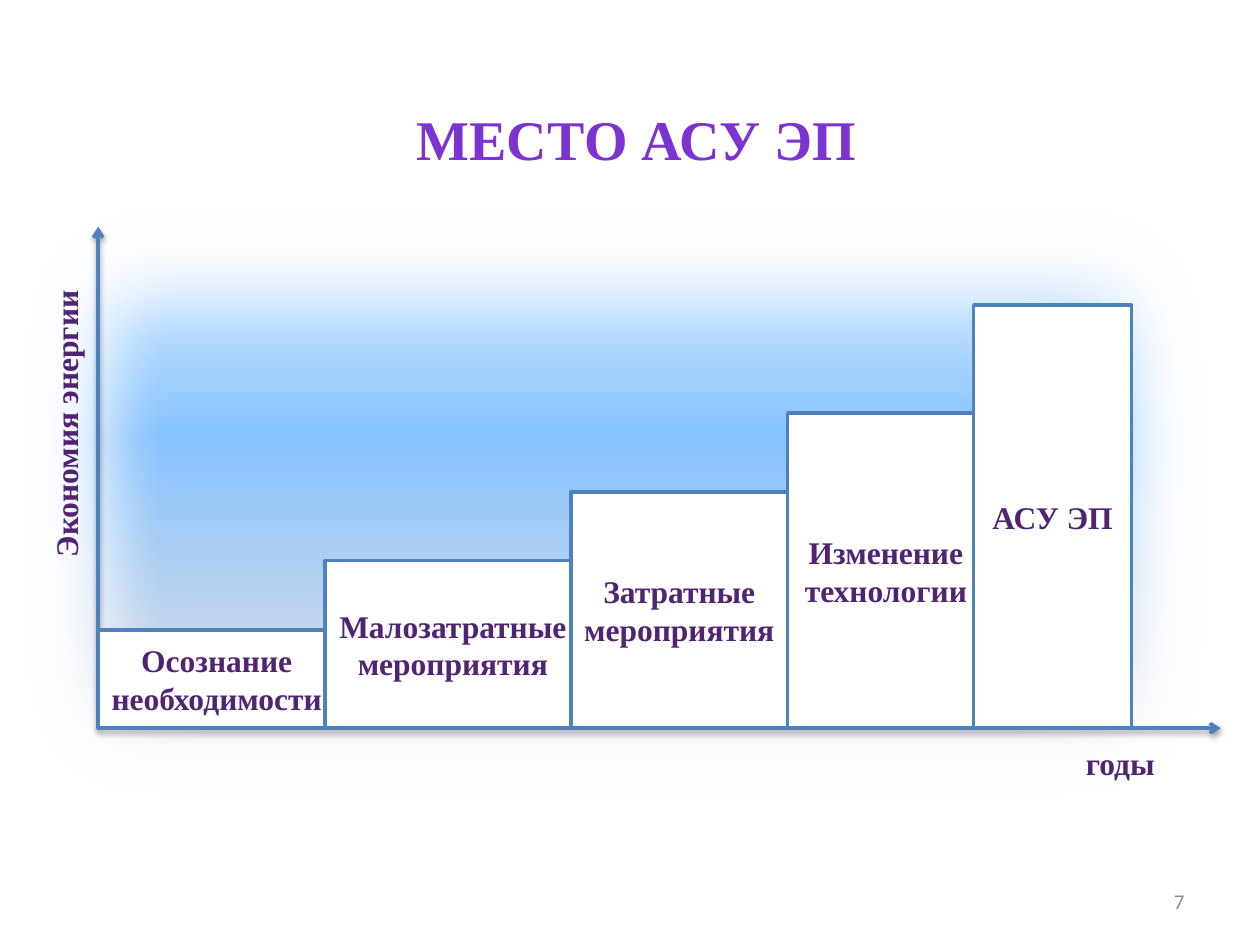
from typing import NamedTuple

from lxml.etree import SubElement
from pptx import Presentation
from pptx.dml.color import RGBColor
from pptx.enum.dml import MSO_THEME_COLOR
from pptx.enum.shapes import MSO_CONNECTOR, MSO_SHAPE
from pptx.enum.text import MSO_ANCHOR, MSO_AUTO_SIZE, PP_ALIGN
from pptx.oxml.ns import qn
from pptx.util import Cm, Pt

SERIF = "Times New Roman"
BLUE, PLUM, VIOLET, GREY = "4F81BD", "512373", "7B34D2", "8C8C8C"
ORIGIN_X, ORIGIN_Y = 1.98, 14.68


class Box(NamedTuple):
    left: float
    top: float
    width: float
    height: float


class Step(NamedTuple):
    text: str
    left: float
    width: float
    height: float


class Label(NamedTuple):
    text: str
    box: Box
    size: int = 18
    font: str = SERIF
    color: str = PLUM
    bold: bool = True
    align: PP_ALIGN = PP_ALIGN.LEFT
    wrap: bool = False
    rotation: int = 0


STEPS = [
    Step("Осознание необходимости", 1.98, 4.78, 1.98),
    Step("Малозатратные мероприятия", 6.55, 5.16, 3.38),
    Step("Затратные мероприятия", 11.51, 4.37, 4.76),
    Step("Изменение технологии", 15.88, 3.96, 6.35),
    Step("АСУ ЭП", 19.63, 3.18, 8.53),
]
TITLE = Label("МЕСТО АСУ ЭП", Box(1.4, 1.19, 22.86, 3.18), size=32,
              color=VIOLET, align=PP_ALIGN.CENTER, wrap=True)
PAGE_NUMBER = Label("7", Box(18.21, 17.65, 5.92, 1.02), size=12, font="Calibri",
                    color=GREY, bold=False, align=PP_ALIGN.RIGHT, wrap=True)
AXIS_LABELS = [
    Label("Экономия энергии", Box(-1.65, 8, 5.94, 1.02), rotation=270),
    Label("годы", Box(21.64, 14.88, 1.91, 1.02)),
]
AXIS_ENDS = [(ORIGIN_X, 4.57), (24.61, ORIGIN_Y)]
SKY = [(0, "FFFFFF"), (40, "85C2FF"), (70, "C4D6EB"), (100, "FFEBFA")]


def rgb(color: str) -> RGBColor:
    return RGBColor.from_string(color)


def add_rect(slide, box: Box):
    sp = slide.shapes.add_shape(MSO_SHAPE.RECTANGLE, *map(Cm, box))
    sp.shadow.inherit = False
    return sp


def write(tf, text: str, size: int, font: str, color: str, bold: bool,
          align: PP_ALIGN) -> None:
    tf.vertical_anchor = MSO_ANCHOR.MIDDLE
    p = tf.paragraphs[0]
    p.alignment = align
    r = p.add_run()
    r.text = text
    r.font.size = Pt(size)
    r.font.name = font
    r.font.bold = bold
    r.font.color.rgb = rgb(color)


def add_label(slide, label: Label) -> None:
    sp = slide.shapes.add_textbox(*map(Cm, label.box))
    sp.rotation = label.rotation
    tf = sp.text_frame
    tf.word_wrap = label.wrap
    if not label.wrap:
        tf.auto_size = MSO_AUTO_SIZE.SHAPE_TO_FIT_TEXT
    write(tf, label.text, label.size, label.font, label.color, label.bold,
          label.align)


def add_backdrop(slide, box: Box) -> None:
    """Draw a vertical gradient that fades out at its edges."""
    sp = add_rect(slide, box)
    sp.line.fill.background()
    sp.fill.gradient()
    grad = sp.fill._xPr.find(qn("a:gradFill"))
    stops = grad.find(qn("a:gsLst"))
    for stop in list(stops):
        stops.remove(stop)
    for position, color in SKY:
        stop = SubElement(stops, qn("a:gs"), pos=str(position * 1000))
        SubElement(stop, qn("a:srgbClr"), val=color)
    grad.find(qn("a:lin")).set("ang", str(90 * 60000))
    effects = sp._element.spPr.find(qn("a:effectLst"))
    SubElement(effects, qn("a:softEdge"), rad=str(Pt(50)))


def add_axis(slide, end_x: float, end_y: float) -> None:
    """Draw an arrow from the origin with a soft shadow below it."""
    cxn = slide.shapes.add_connector(
        MSO_CONNECTOR.STRAIGHT, Cm(ORIGIN_X), Cm(ORIGIN_Y), Cm(end_x), Cm(end_y))
    cxn.line.color.rgb = rgb(BLUE)
    cxn.line.width = Pt(2)
    SubElement(cxn.line._get_or_add_ln(), qn("a:tailEnd"), type="arrow")
    effects = SubElement(cxn._element.spPr, qn("a:effectLst"))
    shadow = SubElement(effects, qn("a:outerShdw"), blurRad=str(Pt(3.1)),
                        dist=str(Pt(1.6)), dir=str(90 * 60000), rotWithShape="0")
    color = SubElement(shadow, qn("a:srgbClr"), val="000000")
    SubElement(color, qn("a:alpha"), val="38000")


def add_step(slide, step: Step) -> None:
    sp = add_rect(slide, Box(step.left, ORIGIN_Y - step.height,
                             step.width, step.height))
    sp.fill.solid()
    sp.fill.fore_color.rgb = rgb("FFFFFF")
    sp.line.color.rgb = rgb(BLUE)
    sp.line.width = Pt(2)
    sp.text_frame.word_wrap = True
    write(sp.text_frame, step.text, 18, SERIF, PLUM, True, PP_ALIGN.CENTER)


def main() -> None:
    prs = Presentation()
    prs.slide_width, prs.slide_height = Cm(25.4), Cm(19.05)
    slide = prs.slides.add_slide(prs.slide_layouts[6])
    slide.background.fill.solid()
    slide.background.fill.fore_color.theme_color = MSO_THEME_COLOR.BACKGROUND_1

    add_backdrop(slide, Box(0, 3.58, 24.82, 13.11))
    add_label(slide, TITLE)
    add_label(slide, PAGE_NUMBER)
    for end in AXIS_ENDS:
        add_axis(slide, *end)
    for step in STEPS:
        add_step(slide, step)
    for label in AXIS_LABELS:
        add_label(slide, label)
    prs.save("out.pptx")


if __name__ == "__main__":
    main()
